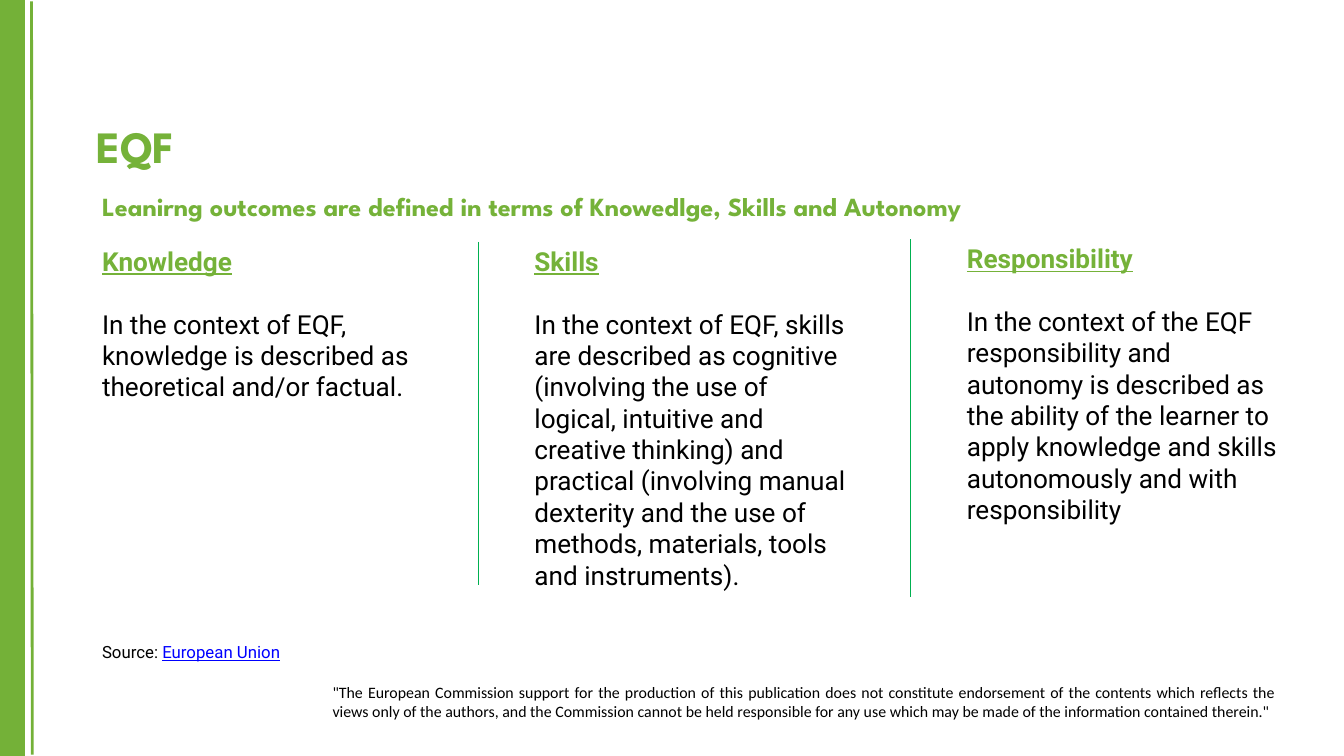
"""Build the EQF learning outcomes slide."""
from lxml.etree import SubElement
from pptx import Presentation
from pptx.dml.color import RGBColor
from pptx.enum.shapes import MSO_CONNECTOR, MSO_SHAPE
from pptx.enum.text import MSO_ANCHOR, MSO_AUTO_SIZE, PP_ALIGN
from pptx.oxml.ns import qn
from pptx.util import Inches, Pt

BAND, GREEN, DIVIDER, BLACK, BLUE = "74B138", "75B239", "00B050", "000000", "0000FF"
HEADING_FONT, BODY_FONT, NOTICE_FONT = "League Spartan", "Roboto", "Calibri"

COLUMN_LEFT, COLUMN_STEP, COLUMN_WIDTH, DIVIDER_GAP = 1.42, 6.435, 4.96, 0.74
COLUMNS = [
    ("Knowledge", "In the context of EQF, knowledge is described as theoretical and/or factual.", 3.6, 2.46),
    ("Skills", "In the context of EQF, skills are described as cognitive (involving the use of "
     "logical, intuitive and creative thinking) and practical (involving manual dexterity and "
     "the use of methods, materials, tools and instruments).", 3.6, 5.28),
    ("Responsibility", "In the context of the EQF responsibility and autonomy is described as the "
     "ability of the learner to apply knowledge and skills autonomously and with responsibility", 3.56, 4.34),
]
DIVIDERS = [(3.6, 8.71), (3.56, 8.89)]
NOTICE = ('"The European Commission support for the production of this publication does not '
          "constitute endorsement of the contents which reflects the views only of the authors, "
          "and the Commission cannot be held responsible for any use which may be made of the "
          'information contained therein."')


def color(value):
    """Turn a hex string into a colour."""
    return RGBColor.from_string(value)


class SlideBuilder:
    """Hold the current slide and draw its elements in one style."""

    def __init__(self, slide):
        """Keep the slide to draw on."""
        self.slide = slide

    def style(self, run, size, font, hue, bold=False, underline=False):
        """Format one run."""
        run.font.size, run.font.name = Pt(size), font
        run.font.bold, run.font.underline = bold, underline
        run.font.color.rgb = color(hue)

    def prepare(self, frame):
        """Wrap a text frame and start it at the top."""
        frame.word_wrap = True
        frame.auto_size = MSO_AUTO_SIZE.SHAPE_TO_FIT_TEXT
        frame.vertical_anchor = MSO_ANCHOR.TOP

    def title(self, wording, left, top, width, height):
        """Move and format the title placeholder."""
        heading = self.slide.shapes.title
        heading.left, heading.top = Inches(left), Inches(top)
        heading.width, heading.height = Inches(width), Inches(height)
        self.prepare(heading.text_frame)
        heading.text_frame.text = wording
        paragraph = heading.text_frame.paragraphs[0]
        paragraph.alignment = PP_ALIGN.LEFT
        self.style(paragraph.runs[0], 48, HEADING_FONT, GREEN, bold=True)

    def text(self, wording, left, top, width, height, size, font, hue, bold=False, underline=False):
        """Add a text box with one paragraph and return its frame."""
        frame = self.slide.shapes.add_textbox(
            Inches(left), Inches(top), Inches(width), Inches(height)).text_frame
        self.prepare(frame)
        frame.text = wording
        self.style(frame.paragraphs[0].runs[0], size, font, hue, bold, underline)
        return frame

    def column(self, heading, description, left, top, height):
        """Add an underlined heading with its description below."""
        frame = self.text(heading, left, top, COLUMN_WIDTH, height, 28, BODY_FONT, GREEN, True, True)
        paragraph = frame.add_paragraph()
        paragraph.text = description
        paragraph.space_before = Pt(33.6)
        self.style(paragraph.runs[0], 28, BODY_FONT, BLACK)

    def bar(self, left, top, width, height):
        """Add a plain filled bar."""
        band = self.slide.shapes.add_shape(
            MSO_SHAPE.RECTANGLE, Inches(left), Inches(top), Inches(width), Inches(height))
        band.shadow.inherit = False
        band.fill.solid()
        band.fill.fore_color.rgb = color(BAND)
        band.line.fill.background()

    def line(self, x1, y1, x2, y2, hue, weight):
        """Add a straight line."""
        rule = self.slide.shapes.add_connector(
            MSO_CONNECTOR.STRAIGHT, Inches(x1), Inches(y1), Inches(x2), Inches(y2))
        rule.line.color.rgb = color(hue)
        rule.line.width = Pt(weight)
        SubElement(rule._element.spPr, qn("a:effectLst"))


def main():
    """Build and save the slide."""
    deck = Presentation()
    deck.slide_width, deck.slide_height = Inches(20), Inches(11.25)
    builder = SlideBuilder(deck.slides.add_slide(deck.slide_layouts[5]))

    builder.bar(0, 0, 0.37, 11.25)
    builder.line(0.47, 0.02, 0.48, 11.23, BAND, 3)
    notice = builder.text(NOTICE, 4.85, 10.11, 14.23, 0.67, 17, NOTICE_FONT, BLACK)
    notice.paragraphs[0].alignment = PP_ALIGN.JUSTIFY

    builder.title("EQF", 1.33, 1.71, 18.33, 0.91)
    builder.text("Leanirng outcomes are defined in terms of Knowedlge, Skills and Autonomy",
                 COLUMN_LEFT, 2.79, 16.58, 0.57, 28, HEADING_FONT, GREEN, bold=True)

    for index, (heading, description, top, height) in enumerate(COLUMNS):
        builder.column(heading, description, COLUMN_LEFT + index * COLUMN_STEP, top, height)
    for index, (top, bottom) in enumerate(DIVIDERS, start=1):
        x = COLUMN_LEFT + index * COLUMN_STEP - DIVIDER_GAP
        builder.line(x, top, x, bottom, DIVIDER, 0.75)

    source = builder.text("Source: ", COLUMN_LEFT, 9.5, 6.6, 0.4, 18, BODY_FONT, BLACK)
    publisher = source.paragraphs[0].add_run()
    publisher.text = "European Union"
    builder.style(publisher, 18, BODY_FONT, BLUE, underline=True)

    deck.save("out.pptx")


if __name__ == "__main__":
    main()
